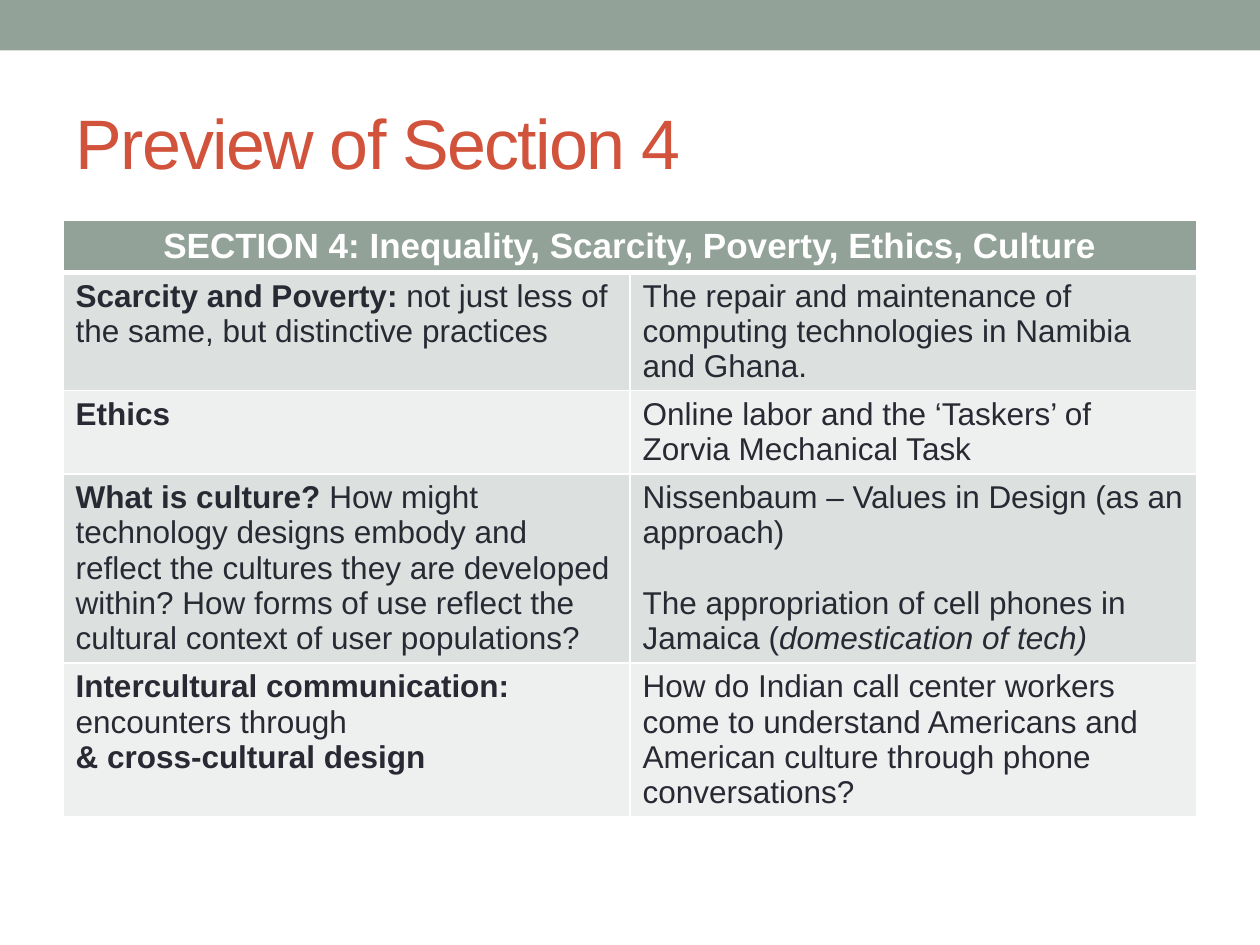
from dataclasses import dataclass

from lxml import etree
from pptx import Presentation
from pptx import util as u
from pptx.dml.color import RGBColor
from pptx.enum import shapes, text
from pptx.oxml.ns import qn


@dataclass(frozen=True)
class Theme:
    font: str = "Arial"
    title_size: int = 40
    header_size: int = 20
    body_size: int = 18
    sage: str = "93A299"
    rust: str = "D2533C"
    ink: str = "292934"
    white: str = "FFFFFF"
    bands: tuple = ("DCE0DE", "EEF0EF")
    rule: int = 1
    header_rule: int = 3


HEADER = "SECTION 4: Inequality, Scarcity, Poverty, Ethics, Culture"
# Each cell is a list of paragraphs; each paragraph is a list of (text, style) runs.
TOPICS = [
    ([[("Scarcity and Poverty:", "b"),
       (" not just less of the same, but distinctive practices", "")]],
     [[("The repair and maintenance of computing technologies in Namibia and Ghana.", "")]]),
    ([[("Ethics", "b")]],
     [[("Online labor and the ‘Taskers’ of Zorvia Mechanical Task", "")]]),
    ([[("What is culture? ", "b"),
       ("How might technology designs embody and reflect the cultures they are "
        "developed within? How forms of use reflect the cultural context of user "
        "populations?", "")]],
     [[("Nissenbaum – Values in Design (as an approach)", "")],
      [("The appropriation of cell phones in Jamaica (", ""),
       ("domestication of tech)", "i")]]),
    ([[("Intercultural communication: ", "b"), ("encounters through", "")],
      [("& cross-cultural design", "b")]],
     [[("How do Indian call center workers come to understand Americans and "
        "American culture through phone conversations?", "")]]),
]
ROW_HEIGHTS = [0.41, 0.94, 0.66, 1.5, 1.22]
ONE_LINE_GAP = 20.2
SPACED_PARAGRAPH = "The appropriation"


class SlideBuilder:
    def __init__(self, slide, theme):
        self.slide = slide
        self.theme = theme

    def style(self, run, size, color, bold=False, italic=False):
        font = run.font
        font.name, font.size = self.theme.font, u.Pt(size)
        font.bold, font.italic = bold, italic
        font.color.rgb = RGBColor.from_string(color)

    def band(self, left, top, width, height):
        bar = self.slide.shapes.add_shape(
            shapes.MSO_SHAPE.RECTANGLE, *map(u.Inches, (left, top, width, height)))
        bar.shadow.inherit = False
        bar.fill.solid()
        bar.fill.fore_color.rgb = RGBColor.from_string(self.theme.sage)
        bar.line.fill.background()

    def title(self, wording, left, top, width, height):
        heading = self.slide.shapes.title
        heading.left, heading.top = u.Inches(left), u.Inches(top)
        heading.width, heading.height = u.Inches(width), u.Inches(height)
        frame = heading.text_frame
        frame.text = wording
        frame.auto_size = text.MSO_AUTO_SIZE.NONE
        frame.vertical_anchor = text.MSO_ANCHOR.MIDDLE
        paragraph = frame.paragraphs[0]
        paragraph.alignment = text.PP_ALIGN.LEFT
        run = paragraph.runs[0]
        self.style(run, self.theme.title_size, self.theme.rust)
        run._r.get_or_add_rPr().set("spc", "-100")

    def paint(self, cell, color, top_rule, bottom_rule):
        """Fill a cell and rule its four sides, widths in points."""
        cell.fill.solid()
        cell.fill.fore_color.rgb = RGBColor.from_string(color)
        properties = cell._tc.get_or_add_tcPr()
        rules = {"lnL": self.theme.rule, "lnR": self.theme.rule,
                 "lnT": top_rule, "lnB": bottom_rule}
        for position, (side, width) in enumerate(rules.items()):
            line = etree.Element(qn(f"a:{side}"), w=str(u.Pt(width)))
            fill = etree.SubElement(line, qn("a:solidFill"))
            etree.SubElement(fill, qn("a:srgbClr"), val=self.theme.white)
            properties.insert(position, line)

    def fill_text(self, cell, paragraphs, size, color, align=text.PP_ALIGN.LEFT):
        frame = cell.text_frame
        for index, runs in enumerate(paragraphs):
            paragraph = frame.add_paragraph() if index else frame.paragraphs[0]
            paragraph.alignment = align
            if runs[0][0].startswith(SPACED_PARAGRAPH):
                paragraph.space_before = u.Pt(ONE_LINE_GAP)
            for wording, look in runs:
                run = paragraph.add_run()
                run.text = wording
                self.style(run, size, color, "b" in look, "i" in look)

    def table(self, header, topics, heights, left, top, width):
        theme = self.theme
        grid = self.slide.shapes.add_table(
            len(heights), 2, u.Inches(left), u.Inches(top),
            u.Inches(width), u.Inches(sum(heights))).table
        for row, height in zip(grid.rows, heights):
            row.height = u.Inches(height)

        grid.cell(0, 0).merge(grid.cell(0, 1))
        for cell in grid.rows[0].cells:
            self.paint(cell, theme.sage, theme.rule, theme.header_rule)
        self.fill_text(grid.cell(0, 0), [[(header, "b")]], theme.header_size,
                       theme.white, text.PP_ALIGN.CENTER)

        for index, topic in enumerate(topics):
            top_rule = theme.rule if index else theme.header_rule
            for column, paragraphs in enumerate(topic):
                cell = grid.cell(index + 1, column)
                self.paint(cell, theme.bands[index % 2], top_rule, theme.rule)
                self.fill_text(cell, paragraphs, theme.body_size, theme.ink)


def main():
    deck = Presentation()
    deck.slide_width, deck.slide_height = u.Inches(10), u.Inches(7.5)
    title_only = deck.slide_layouts[5]
    builder = SlideBuilder(deck.slides.add_slide(title_only), Theme())
    builder.band(0, 0, 10, 0.4)
    builder.title("Preview of Section 4", 0.5, 0.58, 9, 1.08)
    builder.table(HEADER, TOPICS, ROW_HEIGHTS, 0.5, 1.75, 9)
    deck.save("out.pptx")


if __name__ == "__main__":
    main()
